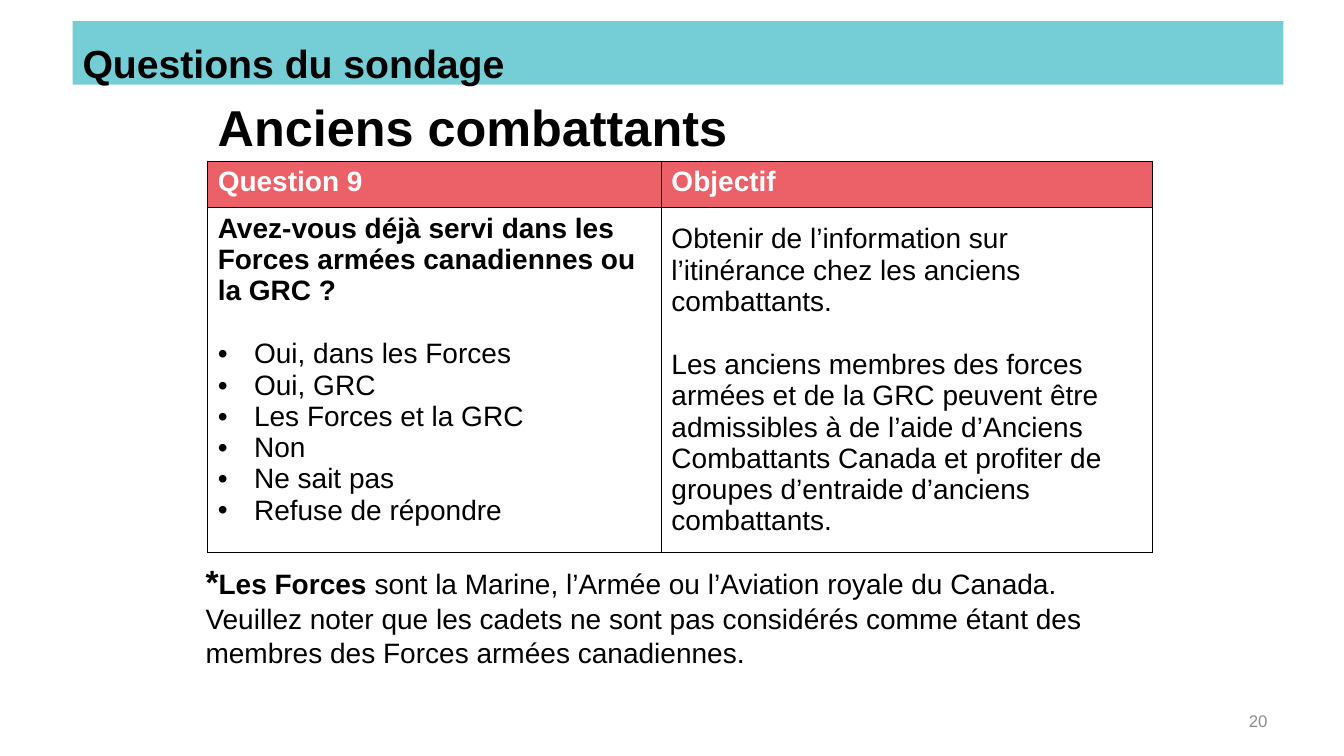
from pptx import Presentation
from pptx.dml.color import RGBColor
from pptx.enum.shapes import MSO_SHAPE
from pptx.enum.text import MSO_ANCHOR, PP_ALIGN
from pptx.oxml import parse_xml
from pptx.oxml.ns import nsdecls
from pptx.util import Inches, Pt

TOP, MID = MSO_ANCHOR.TOP, MSO_ANCHOR.MIDDLE
LEFT, RIGHT = PP_ALIGN.LEFT, PP_ALIGN.RIGHT
RECT = MSO_SHAPE.RECTANGLE
BLACK, WHITE, GREY = "000000", "FFFFFF", "8C8C8C"
TEAL, CORAL = "75CED6", "EC6168"
FONT, BODY, GAP = "Arial", 20, 23
INDENT = Inches(0.36)

# Content
BANNER = "Questions du sondage"
TITLE = "Anciens combattants"
HEADS = ["Question 9", "Objectif"]
ASK = "Avez-vous déjà servi dans les Forces armées canadiennes ou la GRC ?"
CHOICES = ["Oui, dans les Forces", "Oui, GRC", "Les Forces et la GRC",
           "Non", "Ne sait pas", "Refuse de répondre"]
GOALS = [
    "Obtenir de l’information sur l’itinérance chez les anciens combattants.",
    "Les anciens membres des forces armées et de la GRC peuvent être "
    "admissibles à de l’aide d’Anciens Combattants Canada et profiter de "
    "groupes d’entraide d’anciens combattants.",
]
NOTE = [
    ("*", 24, True),
    ("Les Forces ", BODY, True),
    ("sont la Marine, l’Armée ou l’Aviation royale du Canada. Veuillez noter "
     "que les cadets ne sont pas considérés comme étant des membres des "
     "Forces armées canadiennes.", BODY, False),
]
NUMBER = "20"

# Layout: left, top, width, height
BAR = (0.72, 0.21, 12.01, 0.63)
HEADING = (2.06, 0.87, 8.88, 0.77)
GRID = (2.06, 1.6, 9.37, 3.87)
COLS, ROWS = (4.5, 4.87), (0.46, 3.41)
FOOT = (1.94, 5.52, 9.37, 1.18)
PAGE = (9.56, 6.95, 3.11, 0.4)


def rgb(code):
    return RGBColor.from_string(code)


def place(box):
    return [Inches(n) for n in box]


def write(para, text, size=BODY, bold=False, color=BLACK):
    run = para.add_run()
    run.text = text
    font = run.font
    font.name, font.size, font.bold = FONT, Pt(size), bold
    font.color.rgb = rgb(color)


def bullet(para):
    props = para._p.get_or_add_pPr()
    props.set("marL", str(INDENT))
    props.set("indent", str(-INDENT))
    for tag in ('buFont %s typeface="Arial"', 'buChar %s char="•"'):
        props.append(parse_xml(f"<a:{tag % nsdecls('a')}/>"))


def frame(box, anchor=TOP, align=LEFT):
    text = slide.shapes.add_textbox(*place(box)).text_frame
    text.word_wrap, text.vertical_anchor = True, anchor
    para = text.paragraphs[0]
    para.alignment = align
    return para


def border(cell):
    props = cell._tc.get_or_add_tcPr()
    for i, side in enumerate(("lnL", "lnR", "lnT", "lnB")):
        props.insert(i, parse_xml(
            f'<a:{side} {nsdecls("a")} w="{Pt(1)}"><a:solidFill>'
            f'<a:srgbClr val="{BLACK}"/></a:solidFill></a:{side}>'))


deck = Presentation()
deck.slide_width, deck.slide_height = Inches(13.33), Inches(7.5)
slide = deck.slides.add_slide(deck.slide_layouts[6])

# Heading and banner
write(frame(HEADING, MID), TITLE, 36, True)
bar = slide.shapes.add_shape(RECT, *place(BAR))
bar.shadow.inherit = False
bar.fill.solid()
bar.fill.fore_color.rgb = rgb(TEAL)
bar.line.fill.background()
bar.text_frame.vertical_anchor = TOP
line = bar.text_frame.paragraphs[0]
line.alignment, line.line_spacing = LEFT, Pt(43.2)
write(line, BANNER, 28, True)

# Question table
table = slide.shapes.add_table(len(ROWS), len(COLS), *place(GRID)).table
for col, width in zip(table.columns, COLS):
    col.width = Inches(width)
for row, height in zip(table.rows, ROWS):
    row.height = Inches(height)
for r in range(len(ROWS)):
    for c in range(len(COLS)):
        cell = table.cell(r, c)
        cell.fill.solid()
        cell.fill.fore_color.rgb = rgb(WHITE if r else CORAL)
        border(cell)
for c, head in enumerate(HEADS):
    write(table.cell(0, c).text_frame.paragraphs[0], head, BODY, True, WHITE)

ask = table.cell(1, 0).text_frame
write(ask.paragraphs[0], ASK, BODY, True)
for i, choice in enumerate(CHOICES):
    para = ask.add_paragraph()
    bullet(para)
    if i == 0:
        para.space_before = Pt(GAP)
    write(para, choice)

goal = table.cell(1, 1)
goal.vertical_anchor = MID
write(goal.text_frame.paragraphs[0], GOALS[0])
para = goal.text_frame.add_paragraph()
para.space_before = Pt(GAP)
write(para, GOALS[1])

# Footnote and page number
note = frame(FOOT)
for part in NOTE:
    write(note, *part)
write(frame(PAGE, MID, RIGHT), NUMBER, 12, False, GREY)

deck.save("out.pptx")
